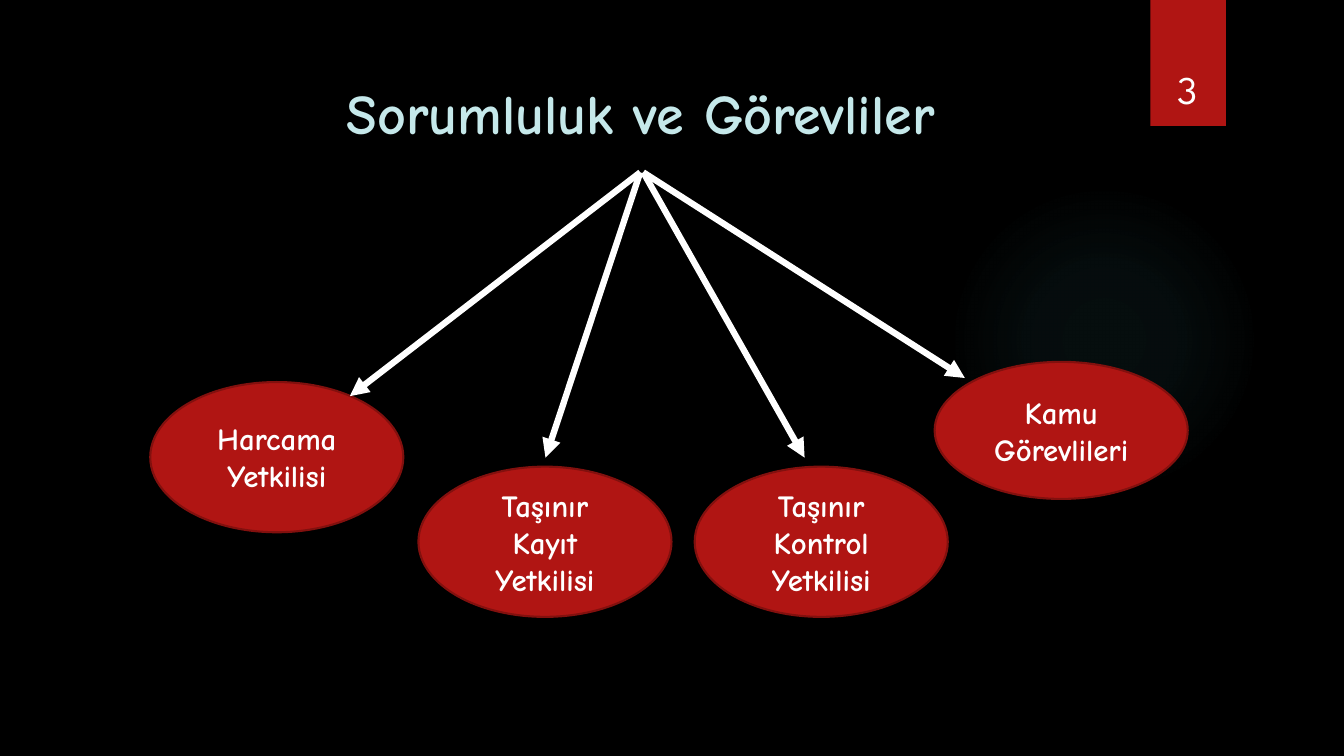
"""Builds a slide that fans out from a title to four responsible roles."""
from pptx import Presentation, oxml
from pptx import util as u
from pptx.dml.color import RGBColor
from pptx.enum import shapes, text
from pptx.oxml.ns import nsdecls, qn

INK = {"back": "000000", "red": "B01513", "edge": "82100E",
       "white": "FFFFFF", "title": "C5E8EA", "glow": "50B9C1"}


def tint(name):
    return RGBColor.from_string(INK[name])


def write(shape, words, font, size, color, bold, anchor):
    frame = shape.text_frame
    frame.word_wrap = True
    frame.vertical_anchor = anchor
    para = frame.paragraphs[0]
    para.text = words
    para.alignment = text.PP_ALIGN.CENTER
    para.font.name = font
    para.font.size = u.Pt(size)
    para.font.bold = bold
    para.font.color.rgb = tint(color)


deck = Presentation()
deck.slide_width = u.Inches(13.33)
deck.slide_height = u.Inches(7.5)
slide = deck.slides.add_slide(deck.slide_layouts[6])
slide.background.fill.solid()
slide.background.fill.fore_color.rgb = tint("back")
items = slide.shapes
kinds = shapes.MSO_SHAPE
mid = text.MSO_ANCHOR.MIDDLE

glow = items.add_shape(kinds.OVAL, u.Inches(9.41), u.Inches(1.83),
                       u.Inches(3.08), u.Inches(3.08))
glow.shadow.inherit = False
glow.line.fill.background()
glow.fill.gradient()
stops = "".join(
    f'<a:gs pos="{pos * 1000}"><a:srgbClr val="{INK["glow"]}">'
    f'<a:alpha val="{alpha * 1000}"/></a:srgbClr></a:gs>'
    for pos, alpha in [(0, 7), (36, 6), (69, 0)])
fade = oxml.parse_xml(
    f'<a:gradFill {nsdecls("a")}><a:gsLst>{stops}</a:gsLst><a:path path="circle">'
    '<a:fillToRect l="50000" t="50000" r="50000" b="50000"/></a:path></a:gradFill>')
props = glow.element.spPr
props.replace(props.find(qn("a:gradFill")), fade)

ribbon = items.add_shape(kinds.RECTANGLE, u.Inches(11.41), 0,
                         u.Inches(0.75), u.Inches(1.25))
ribbon.shadow.inherit = False
ribbon.fill.solid()
ribbon.fill.fore_color.rgb = tint("red")
ribbon.line.fill.background()

title = items.add_textbox(u.Inches(1.21), u.Inches(0.68), u.Inches(10.29), u.Inches(0.87))
write(title, "Sorumluluk ve Görevliler", "Comic Neue", 40, "title", True, mid)
number = items.add_textbox(u.Inches(11.32), u.Inches(0.32), u.Inches(0.92), u.Inches(0.84))
write(number, "3", "League Spartan", 28, "white", False, text.MSO_ANCHOR.BOTTOM)

roles = [("Harcama Yetkilisi", 1.49, 3.79, 1.49),
         ("Taşınır Kayıt Yetkilisi", 4.15, 4.63, 1.49),
         ("Taşınır Kontrol Yetkilisi", 6.89, 4.63, 1.49),
         ("Kamu Görevlileri", 9.27, 3.59, 1.36)]
for name, left, top, height in roles:
    oval = items.add_shape(kinds.OVAL, u.Inches(left), u.Inches(top),
                           u.Inches(2.51), u.Inches(height))
    oval.shadow.inherit = False
    oval.fill.solid()
    oval.fill.fore_color.rgb = tint("red")
    oval.line.color.rgb = tint("edge")
    oval.line.width = u.Pt(1.5)
    write(oval, name, "Comic Neue", 22, "white", True, mid)

arrows = [(6.35, 5.41, 4.54), (6.38, 7.98, 4.54), (6.38, 9.57, 3.75), (6.35, 3.47, 3.93)]
for start, end, low in arrows:
    arrow = items.add_connector(shapes.MSO_CONNECTOR.STRAIGHT, u.Inches(start),
                                u.Inches(1.71), u.Inches(end), u.Inches(low))
    arrow.line.color.rgb = tint("white")
    arrow.line.width = u.Pt(4.5)
    arrow.line._get_or_add_ln().append(
        oxml.parse_xml(f'<a:tailEnd {nsdecls("a")} type="triangle"/>'))
    arrow.element.spPr.append(oxml.parse_xml(f'<a:effectLst {nsdecls("a")}/>'))

deck.save("out.pptx")
